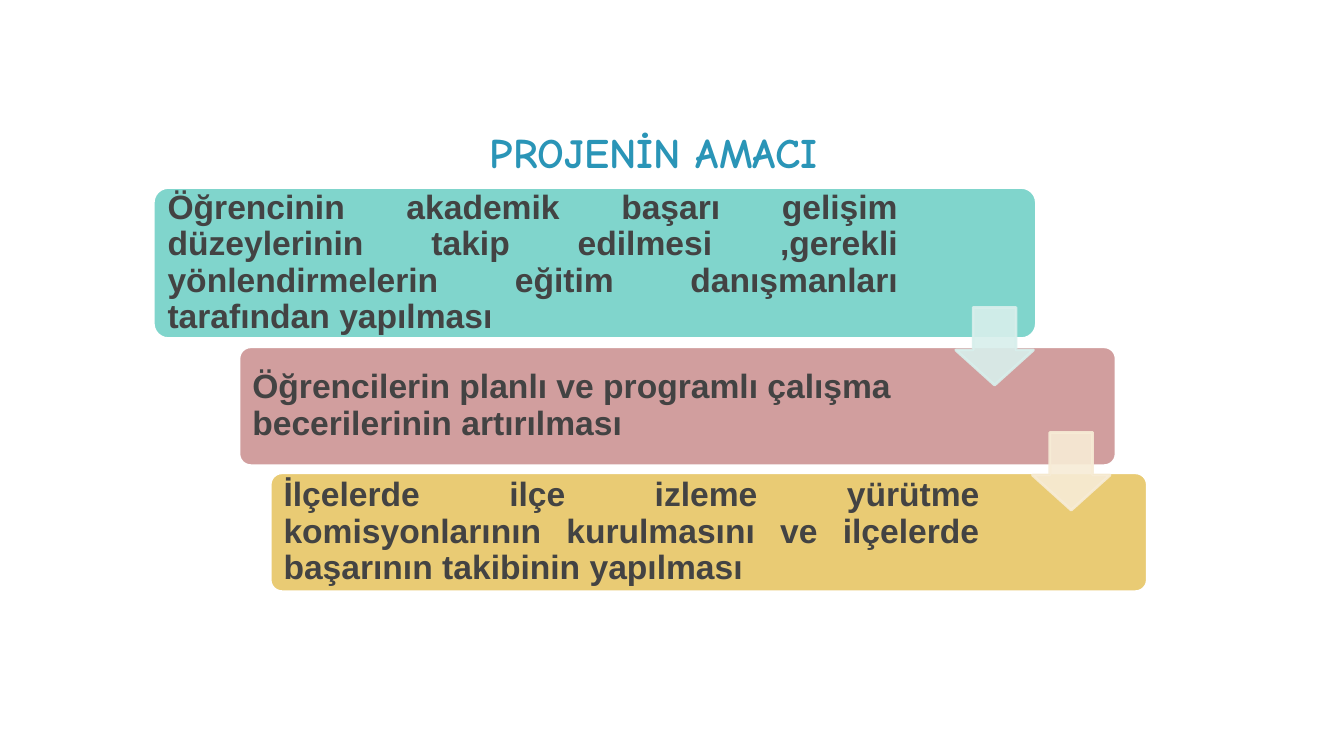
from lxml.etree import SubElement
from pptx import Presentation
from pptx.dml.color import RGBColor
from pptx.enum.shapes import MSO_SHAPE
from pptx.enum.text import MSO_ANCHOR, PP_ALIGN
from pptx.oxml.ns import qn
from pptx.util import Inches, Pt

COLORS = {
    "title": "2A95B7", "text": "434343", "outline": "FFFFFF",
    "teal": "80D5CC", "rose": "D19E9E", "gold": "E9CB74",
    "pale teal": "D8EFEC", "pale gold": "F7ECD6",
}
# Box (left, top, width, height), fill, right margin, alignment, text
STEPS = [
    ((1.52, 1.86, 8.76, 1.5), "teal", 1.33, PP_ALIGN.JUSTIFY,
     "Öğrencinin akademik başarı gelişim düzeylerinin takip edilmesi ,gerekli "
     "yönlendirmelerin eğitim danışmanları tarafından yapılması"),
    ((2.37, 3.44, 8.7, 1.18), "rose", 1.63, PP_ALIGN.LEFT,
     "Öğrencilerin planlı ve programlı çalışma becerilerinin artırılması"),
    ((2.68, 4.69, 8.7, 1.18), "gold", 1.63, PP_ALIGN.JUSTIFY,
     "İlçelerde ilçe izleme yürütme komisyonlarının kurulmasını ve ilçelerde "
     "başarının takibinin yapılması"),
]
ARROWS = [((9.48, 3.05, 0.77, 0.77), "pale teal"),
          ((10.24, 4.29, 0.77, 0.77), "pale gold")]


def color(name):
    return RGBColor.from_string(COLORS[name])


def set_font(para, name, size, color_name):
    para.font.name = name
    para.font.size = Pt(size)
    para.font.bold = True
    para.font.color.rgb = color(color_name)


def add_title(page, box, text):
    title = page.shapes.title
    title.left, title.top, title.width, title.height = map(Inches, box)
    frame = title.text_frame
    frame.text = text
    frame.vertical_anchor = MSO_ANCHOR.TOP
    frame.margin_left = Inches(3.33)
    frame.margin_top = frame.margin_right = frame.margin_bottom = Inches(0.1)
    para = frame.paragraphs[0]
    para.alignment = PP_ALIGN.LEFT
    set_font(para, "Comic Neue", 30, "title")


def add_block(page, kind, box, adjustments, fill, outline):
    shape = page.shapes.add_shape(kind, *map(Inches, box))
    shape.shadow.inherit = False
    for index, value in enumerate(adjustments):
        shape.adjustments[index] = value
    shape.fill.solid()
    shape.fill.fore_color.rgb = color(fill)
    shape.line.color.rgb = color(outline)
    shape.line.width = Pt(2)
    return shape


def add_step(page, box, fill, right_margin, alignment, text):
    card = add_block(page, MSO_SHAPE.ROUNDED_RECTANGLE, box, [0.1], fill, "outline")
    frame = card.text_frame
    frame.word_wrap = True
    frame.vertical_anchor = MSO_ANCHOR.MIDDLE
    frame.margin_left = Inches(0.1)
    frame.margin_right = Inches(right_margin)
    frame.margin_top = frame.margin_bottom = 0
    frame.text = text
    para = frame.paragraphs[0]
    para.alignment = alignment
    para.line_spacing = 0.9
    set_font(para, "Arial", 24, "text")


def add_arrow(page, box, fill):
    arrow = add_block(page, MSO_SHAPE.DOWN_ARROW, box, [0.55, 0.45], fill, fill)
    # Fill and outline are 90% opaque
    for tint in arrow.element.spPr.iter(qn("a:srgbClr")):
        SubElement(tint, qn("a:alpha"), val="90000")


def main():
    deck = Presentation()
    deck.slide_width, deck.slide_height = Inches(13.33), Inches(7.5)
    page = deck.slides.add_slide(deck.slide_layouts[5])
    add_title(page, (1.53, 1.16, 10.24, 1.09), "PROJENİN AMACI")
    for step in STEPS:
        add_step(page, *step)
    for arrow in ARROWS:
        add_arrow(page, *arrow)
    deck.save("out.pptx")


if __name__ == "__main__":
    main()
